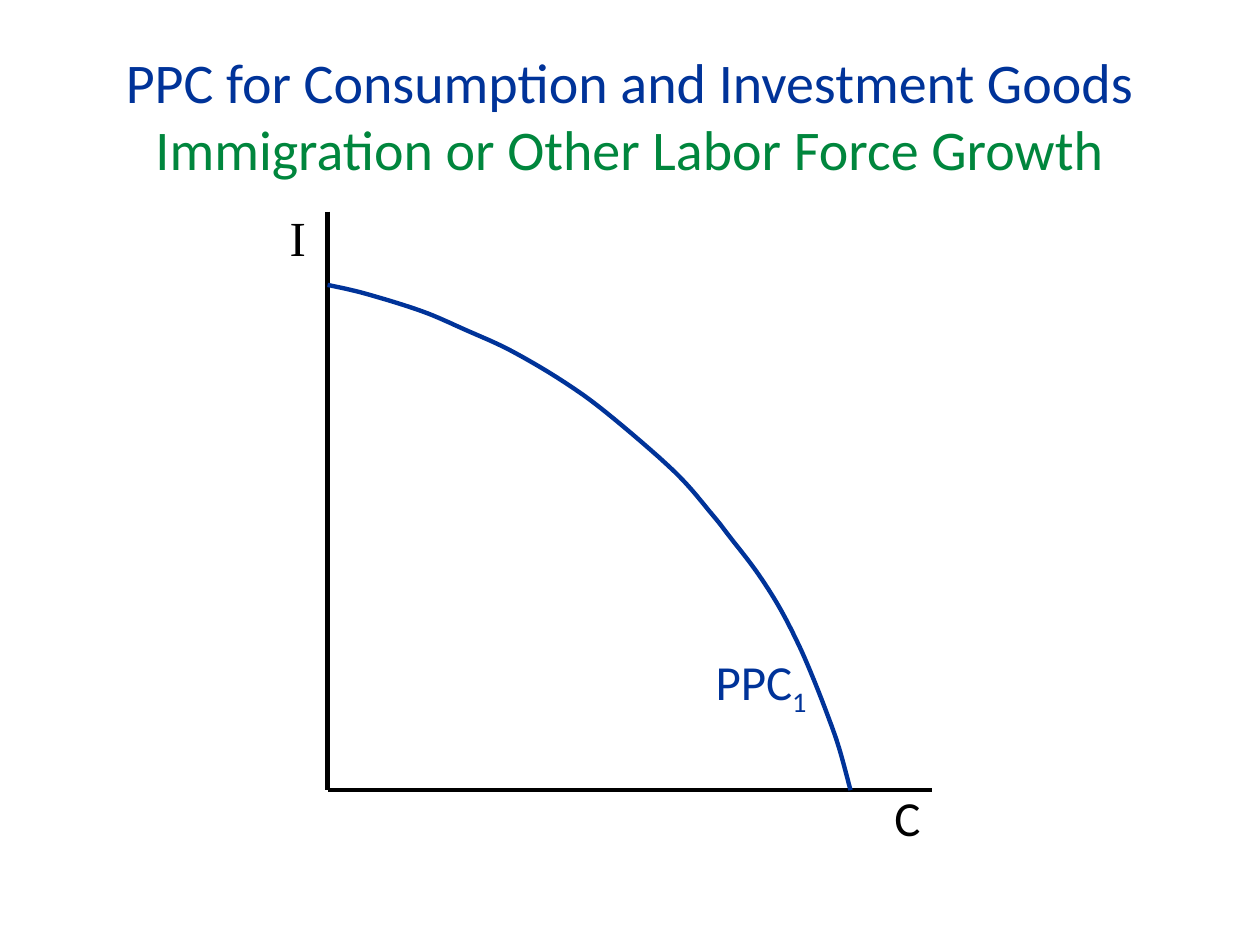
from pptx import Presentation
from pptx.dml.color import RGBColor
from pptx.enum.shapes import MSO_CONNECTOR
from pptx.enum.text import MSO_ANCHOR, MSO_AUTO_SIZE, PP_ALIGN
from pptx.oxml.ns import qn
from pptx.util import Pt
from lxml.etree import SubElement

BLUE, GREEN, BLACK = "003399", "00863D", "000000"
LINE_WIDTH = 2.5
STEPS = 8

# Points on the frontier: distance right of and above the origin of the axes
FRONTIER = [
    (0, 288.7), (21.6, 283.7), (54, 273.6), (79.2, 262.8), (104.4, 251.3),
    (133.9, 234), (159.8, 215.3), (198, 182.2), (219.6, 157.7), (230.4, 144),
    (244.8, 125.3), (257.8, 105.1), (269.3, 82.8), (278.6, 61.2),
    (288, 36.7), (293, 21.6), (298.8, 0),
]


def color(value):
    return RGBColor.from_string(value)


def style_line(sp, value):
    sp.line.color.rgb = color(value)
    sp.line.width = Pt(LINE_WIDTH)


def add_text(slide, box, lines, **frame):
    """Each line is an alignment and a list of (text, font values, baseline)."""
    tf = slide.shapes.add_textbox(*map(Pt, box)).text_frame
    values = {"word_wrap": True, "auto_size": MSO_AUTO_SIZE.SHAPE_TO_FIT_TEXT}
    for name, value in (values | frame).items():
        setattr(tf, name, value)
    for i, (align, runs) in enumerate(lines):
        p = tf.add_paragraph() if i else tf.paragraphs[0]
        p.alignment = align
        for text, size, font, value, baseline in runs:
            r = p.add_run()
            r.text = text
            for name, item in {"size": Pt(size), "name": font}.items():
                setattr(r.font, name, item)
            r.font.color.rgb = color(value)
            if baseline:
                r._r.get_or_add_rPr().set("baseline", str(baseline * 1000))


def add_title(slide, box):
    lines = [
        (PP_ALIGN.CENTER, [(text, 32, "Calibri", value, 0)])
        for text, value in (
            ("PPC for Consumption and Investment Goods", BLUE),
            ("Immigration or Other Labor Force Growth", GREEN),
        )
    ]
    add_text(slide, box, lines, vertical_anchor=MSO_ANCHOR.MIDDLE)


def add_axis(slide, start, end):
    s = slide.shapes.add_connector(
        MSO_CONNECTOR.STRAIGHT, *map(Pt, start + end))
    style_line(s, BLACK)
    SubElement(s._element.spPr, qn("a:effectLst"))


def smooth_points(knots):
    """Catmull-Rom curve through the knots, sampled in equal steps."""
    padded = [knots[0], *knots, knots[-1]]
    points = [knots[0]]
    for quad in zip(padded, padded[1:], padded[2:], padded[3:]):
        for step in range(1, STEPS + 1):
            t = step / STEPS
            points.append(tuple(
                b + t * (c - a) / 2
                + t**2 * (2 * a - 5 * b + 4 * c - d) / 2
                + t**3 * (3 * b - a - 3 * c + d) / 2
                for a, b, c, d in zip(*quad)))
    return points


def add_frontier(slide, x0, y0):
    points = [(Pt(x0 + x), Pt(y0 - y)) for x, y in smooth_points(FRONTIER)]
    builder = slide.shapes.build_freeform(*points[0])
    builder.add_line_segments(points[1:], close=False)
    sp = builder.convert_to_shape()
    sp.shadow.inherit = False
    sp.fill.background()
    style_line(sp, BLUE)


def add_graph(slide, box):
    left, top, width, height = box
    bottom = top + height
    add_axis(slide, (left, top), (left, bottom))
    add_axis(slide, (left, bottom), (left + width, bottom))
    add_frontier(slide, left, bottom)
    labels = [
        (-28.8, -5.8, 30.2, [("I", 28, "Times New Roman", BLACK, 0)]),
        (316.8, 325.4, 36, [("C", 28, "Calibri", BLACK, 0)]),
        (214.6, 247.6, 72, [("PPC", 28, "Calibri", BLUE, 0),
                            ("1", 28, "Calibri", BLUE, -25)]),
    ]
    for dx, dy, label_width, runs in labels:
        add_text(slide, (left + dx, top + dy, label_width, 41),
                 [(PP_ALIGN.LEFT, runs)])


def main():
    prs = Presentation()
    prs.slide_width, prs.slide_height = Pt(720), Pt(540)
    slide = prs.slides.add_slide(prs.slide_layouts[6])
    add_title(slide, (50.4, 23, 619.2, 85))
    add_graph(slide, (187.2, 121, 345.6, 330.5))
    prs.save("out.pptx")


if __name__ == "__main__":
    main()
